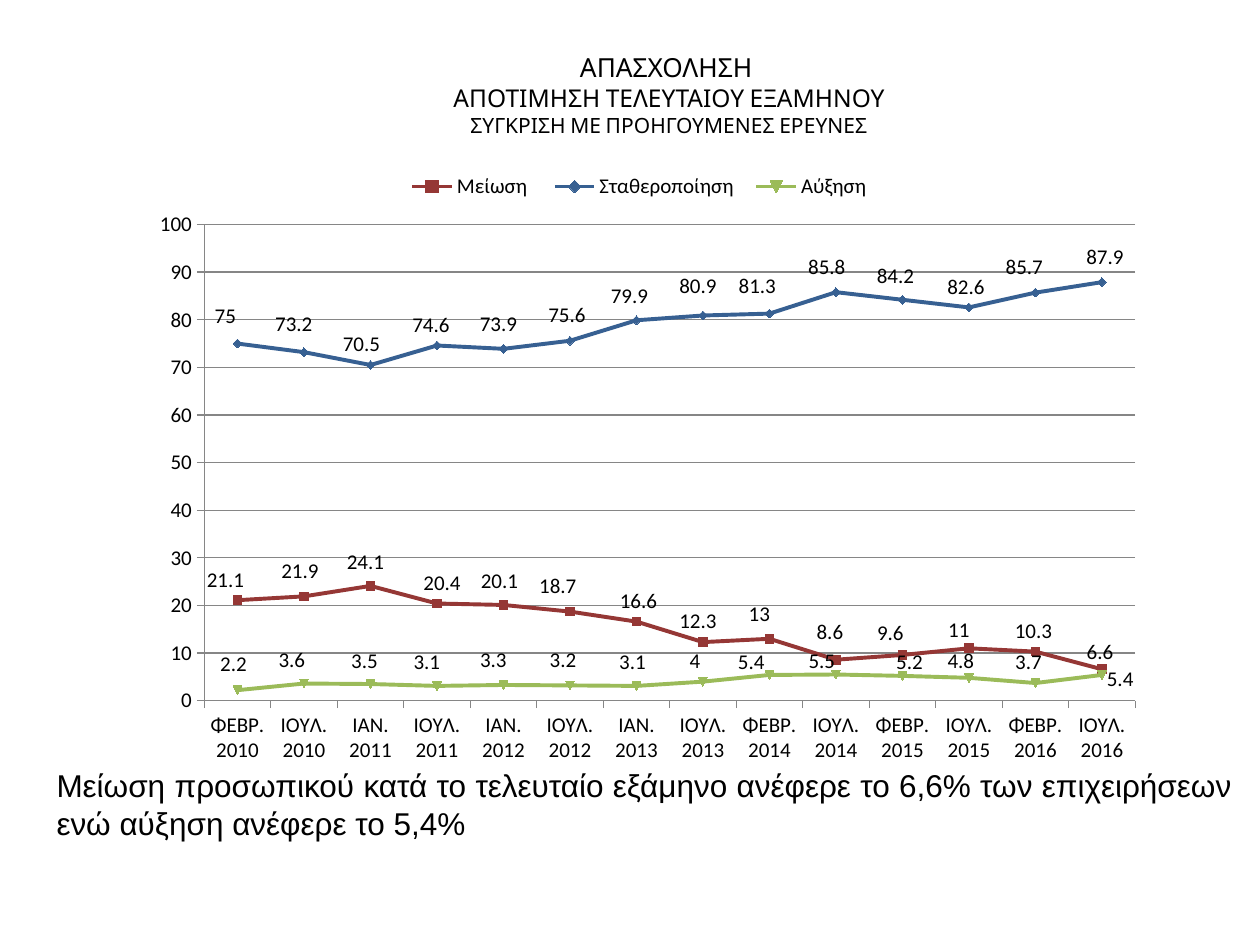
from copy import deepcopy

from lxml.etree import SubElement
from pptx import Presentation
from pptx.chart.data import CategoryChartData as Data
from pptx.dml.color import RGBColor as Rgb
from pptx.enum.chart import XL_CHART_TYPE as Kind
from pptx.enum.chart import XL_LABEL_POSITION as Spot
from pptx.enum.chart import XL_LEGEND_POSITION as Side
from pptx.enum.chart import XL_TICK_MARK as Tick
from pptx.enum.text import PP_ALIGN as Align
from pptx.oxml.ns import qn
from pptx.util import Cm, Pt

HUES = {"ink": "000000", "grid": "868686",
        "down": "953735", "same": "376092", "up": "9BBB59"}
SMALL = {"name": "Calibri", "size": Pt(12)}

TITLE = [("ΑΠΑΣΧΟΛΗΣΗ ", 15),
         ("ΑΠΟΤΙΜΗΣΗ ΤΕΛΕΥΤΑΙΟΥ ΕΞΑΜΗΝΟΥ", 14),
         ("ΣΥΓΚΡΙΣΗ ΜΕ ΠΡΟΗΓΟΥΜΕΝΕΣ ΕΡΕΥΝΕΣ", 12)]
NOTE = [("Μείωση προσωπικού κατά το τελευταίο εξάμηνο ανέφερε το 6,6% "
         "των επιχειρήσεων ενώ αύξηση ανέφερε το 5,4%", 18)]

DATES = ["ΦΕΒΡ. 2010", "ΙΟΥΛ. 2010", "ΙΑΝ. 2011", "ΙΟΥΛ. 2011", "ΙΑΝ. 2012",
         "ΙΟΥΛ. 2012", "ΙΑΝ. 2013", "ΙΟΥΛ. 2013", "ΦΕΒΡ. 2014", "ΙΟΥΛ. 2014",
         "ΦΕΒΡ. 2015", "ΙΟΥΛ. 2015", "ΦΕΒΡ. 2016", "ΙΟΥΛ. 2016"]

# Name, colour, marker size, values, label shifts in thousandths of the chart
LINES = [
    ("Μείωση ", "down", 5,
     [21.1, 21.9, 24.1, 20.4, 20.1, 18.7, 16.6,
      12.3, 13, 8.6, 9.6, 11, 10.3, 6.6],
     [(-12, 3), (-4, -6), (-5, -3), (5, 2), (-4, -3), (-12, -5), (2, 2),
      (-5, 2), (-10, -5), (-6, -9), (-12, 0), (-10, 6), (-2, 2), (-2, 8)]),
    ("Σταθεροποίηση", "same", 5,
     [75, 73.2, 70.5, 74.6, 73.9, 75.6, 79.9,
      80.9, 81.3, 85.8, 84.2, 82.6, 85.7, 87.9],
     [(-12, -9), (-10, -9), (-9, 2), (-6, 2), (-5, -5), (-3, -6), (-7, -3),
      (-5, -11), (-12, -8), (-9, -5), (-7, -2), (-3, 2), (-11, -6), (3, -5)]),
    ("Αύξηση", "up", None,
     [2.2, 3.6, 3.5, 3.1, 3.3, 3.2, 3.1, 4, 5.4, 5.5, 5.2, 4.8, 3.7, 5.4],
     [(-4, -6), (-12, -3), (-6, -2), (-10, -3), (-10, -5), (-7, -6), (-4, -3),
      (-8, 3), (-18, 14), (-14, 14), (7, 13), (-8, 9), (-7, 2), (18, 42)]),
]


def style(item, form):
    for key, val in form.items():
        setattr(item, key, val)


def ink(font, form, hue="ink"):
    style(font, form)
    font.color.rgb = Rgb.from_string(HUES[hue])


def place(node, spot, **vals):
    """Give a chart part a manual layout as child number spot."""
    out = SubElement(node, qn("c:layout"))
    man = SubElement(out, qn("c:manualLayout"))
    for key, val in vals.items():
        SubElement(man, qn("c:" + key)).set("val", str(val))
    node.insert(spot, out)


def add_text(slide, area, rows, face, align):
    """Write rows as one paragraph with line breaks."""
    box = slide.shapes.add_textbox(*map(Cm, area))
    box.text_frame.word_wrap = True
    para = box.text_frame.paragraphs[0]
    para.alignment = align
    for num, (text, size) in enumerate(rows):
        if num:
            para.add_line_break()
            para._p[-1].append(deepcopy(run._r.rPr))
        run = para.add_run()
        run.text = text
        ink(run.font, {"name": face, "size": Pt(size)})


def set_axes(chart):
    style(chart.value_axis, {"minimum_scale": 0, "maximum_scale": 100,
                             "major_unit": 10, "has_major_gridlines": True})
    axes = chart.category_axis, chart.value_axis
    for axis in axes:
        axis.major_tick_mark = Tick.OUTSIDE
        ink(axis.tick_labels.font, SMALL)
    for part in (*axes, chart.value_axis.major_gridlines):
        line = part.format.line
        line.color.rgb = Rgb.from_string(HUES["grid"])
        line.width = Pt(0.75)


def set_line(line, hue, size, moves):
    tone = Rgb.from_string(HUES[hue])
    line.smooth = False
    line.format.line.color.rgb = tone
    mark = line.marker
    mark.size = size
    mark.format.fill.solid()
    mark.format.fill.fore_color.rgb = tone
    mark.format.line.color.rgb = tone
    # Value labels, each nudged from its place above the point
    tags = line.data_labels
    style(tags, {"show_value": True, "position": Spot.ABOVE})
    ink(tags.font, SMALL)
    for num in range(len(moves)):
        tag = line.points[num].data_label
        ink(tag.font, SMALL)
        tag.position = Spot.ABOVE
    for node, (x, y) in zip(tags._element.findall(qn("c:dLbl")), moves):
        place(node, 1, x=x / 1000, y=y / 1000)


def add_lines(slide, area):
    data = Data()
    data.categories = DATES
    for name, _, _, vals, _ in LINES:
        data.add_series(name, vals)
    frame = slide.shapes.add_chart(Kind.LINE_MARKERS, *map(Cm, area), data)
    chart = frame.chart
    chart.has_title = False
    ink(chart.font, {"name": "Cambria", "size": Pt(18)})
    set_axes(chart)
    plot = chart.plots[0]
    plot.vary_by_categories = False
    for line, (_, hue, size, _, moves) in zip(plot.series, LINES):
        set_line(line, hue, size, moves)
    # Plot area and legend
    room = chart._chartSpace.chart.plotArea
    for old in room.findall(qn("c:layout")):
        room.remove(old)
    place(room, 0, layoutTarget="inner", xMode="edge", yMode="edge",
          x=0.07, y=0.11, w=0.92, h=0.75)
    chart.has_legend = True
    key = chart.legend
    style(key, {"position": Side.RIGHT, "include_in_layout": False})
    ink(key.font, SMALL)
    for old in key._element.findall(qn("c:layout")):
        key._element.remove(old)
    place(key._element, 1, xMode="edge", yMode="edge",
          x=0.26, y=0.02, w=0.48, h=0.06)


def main():
    deck = Presentation()
    style(deck, {"slide_width": Cm(25.4), "slide_height": Cm(19.05)})
    slide = deck.slides.add_slide(deck.slide_layouts[6])
    # Heading, chart, comment
    add_text(slide, (3.18, 0.91, 20.62, 1.37), TITLE, "Cabin", Align.CENTER)
    add_lines(slide, (2.69, 3.12, 20.4, 12.8))
    add_text(slide, (0.89, 15.32, 24.2, 1.8), NOTE, "Arial", Align.JUSTIFY)
    deck.save("out.pptx")


if __name__ == "__main__":
    main()
